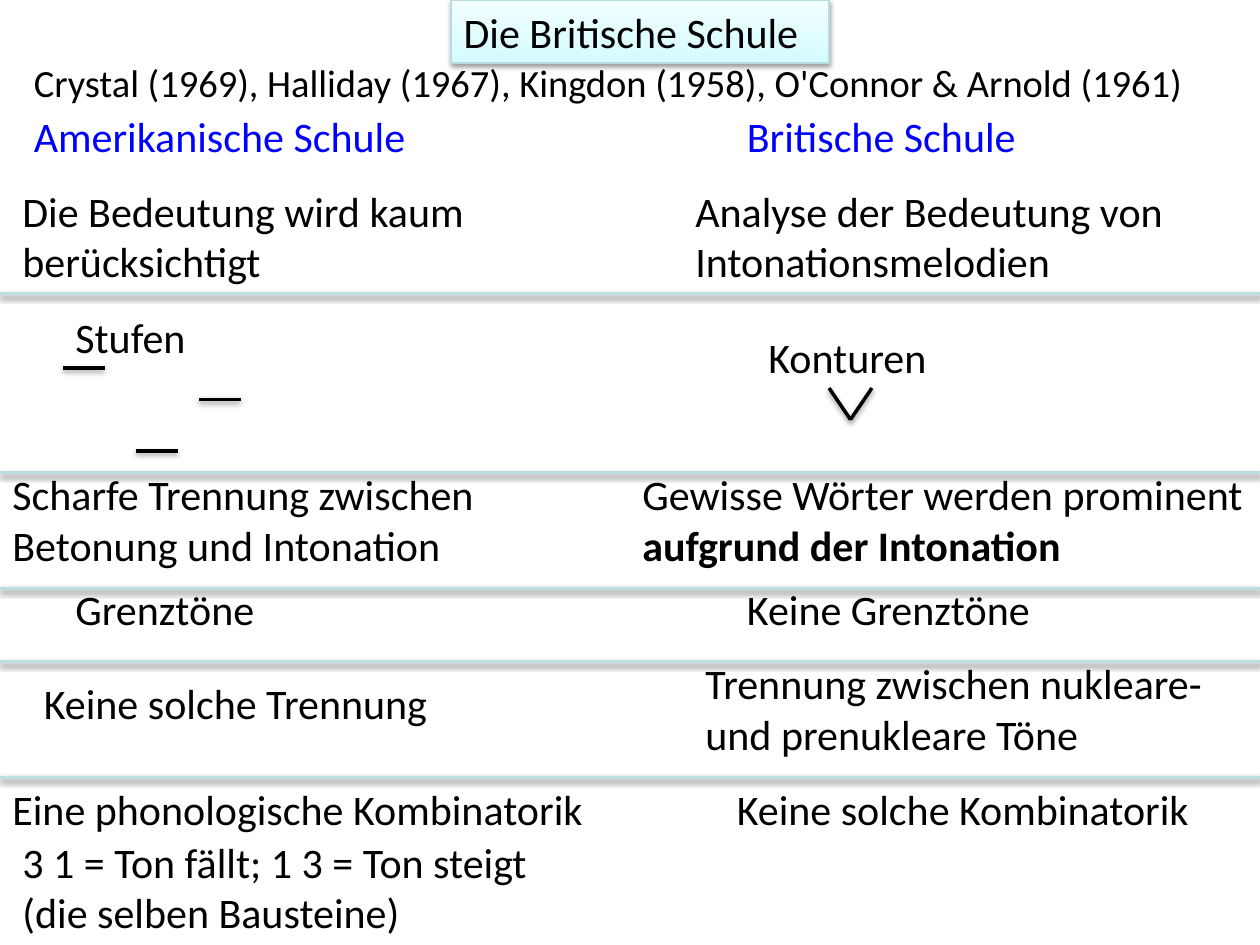
from dataclasses import dataclass

import pptx
import pptx.dml.color
import pptx.enum.shapes
import pptx.enum.text
import pptx.oxml
import pptx.oxml.ns
import pptx.util
from pptx.util import Inches

COLORS = {
    "text": "000000",
    "heading": "0000FF",
    "divider": "BBE0E3",
    "mark": "000000",
    "title_border": "B6DCDF",
}
TITLE_GRADIENT = [(0, "D3FBFF"), (35, "DFFCFF"), (100, "F2FEFF")]
FONT = "Calibri"
A_NS = pptx.oxml.ns.nsdecls("a")


@dataclass
class Entry:
    text: str
    left: float
    top: float
    width: float
    height: float = 0.5
    color: str = "text"
    size: float = 24
    bold_ending: str = ""


@dataclass
class Stroke:
    x1: float
    y1: float
    x2: float
    y2: float
    color: str = "mark"


ENTRIES = [
    # Sources and column headings
    Entry("Crystal (1969), Halliday (1967), Kingdon (1958), O'Connor & Arnold (1961)",
          0.17, 0.42, 9.58, 0.47, size=22),
    Entry("Amerikanische Schule", 0.17, 0.83, 3.75, color="heading"),
    Entry("Britische Schule", 5.83, 0.83, 3.83, color="heading"),
    # Meaning
    Entry("Die Bedeutung wird kaum berücksichtigt", 0.08, 1.42, 4, 0.91),
    Entry("Analyse der Bedeutung von Intonationsmelodien", 5.42, 1.42, 4.17, 0.91),
    # Levels and contours
    Entry("Stufen", 0.5, 2.42, 1.58),
    Entry("Konturen", 6, 2.58, 1.67),
    # Stress and intonation
    Entry("Scharfe Trennung zwischen Betonung und Intonation", 0, 3.67, 4.08, 0.91),
    Entry("Gewisse Wörter werden prominent ", 5, 3.67, 5, 0.91,
          bold_ending="aufgrund der Intonation"),
    # Boundary tones
    Entry("Grenztöne", 0.5, 4.58, 1.75),
    Entry("Keine Grenztöne", 5.83, 4.58, 2.58),
    # Nuclear and prenuclear tones
    Entry("Keine solche Trennung", 0.25, 5.33, 4.08),
    Entry("Trennung zwischen nukleare- und prenukleare Töne", 5.5, 5.17, 4.25, 0.91),
    # Combinations
    Entry("Eine phonologische Kombinatorik", 0, 6.17, 4.83),
    Entry("3 1 = Ton fällt; 1 3 = Ton steigt (die selben Bausteine)",
          0.08, 6.59, 4.5, 0.91),
    Entry("Keine solche Kombinatorik", 5.75, 6.17, 4),
]

DIVIDER_TOPS = [2.33, 3.75, 4.67, 5.25, 6.17]
LEVEL_MARKS = [(0.5, 2.92), (1.08, 3.58), (1.58, 3.17)]
STROKES = [
    *(Stroke(0, y, 10, y, "divider") for y in DIVIDER_TOPS),
    *(Stroke(x, y, x + 0.33, y) for x, y in LEVEL_MARKS),
    *(Stroke(x, 3.08, 6.75, 3.33) for x in (6.58, 6.92)),
]


def rgb(hex_color: str) -> pptx.dml.color.RGBColor:
    return pptx.dml.color.RGBColor.from_string(hex_color)


def add_shadow(shape) -> None:
    shape._element.spPr.append(pptx.oxml.parse_xml(
        f'<a:effectLst {A_NS}><a:outerShdw blurRad="{pptx.util.Pt(3.1)}" '
        f'dist="{pptx.util.Pt(1.6)}" dir="5400000" rotWithShape="0">'
        '<a:srgbClr val="000000"><a:alpha val="38000"/></a:srgbClr>'
        '</a:outerShdw></a:effectLst>'))


def format_text(frame, color: str, size: float) -> None:
    frame.word_wrap = True
    frame.vertical_anchor = pptx.enum.text.MSO_ANCHOR.TOP
    for paragraph in frame.paragraphs:
        paragraph.alignment = pptx.enum.text.PP_ALIGN.LEFT
        for run in paragraph.runs:
            run.font.name = FONT
            run.font.size = pptx.util.Pt(size)
            run.font.color.rgb = rgb(COLORS[color])


def fill_title(title) -> None:
    title.left, title.top = Inches(3.58), Inches(0)
    title.width, title.height = Inches(3), Inches(0.5)
    title.text_frame.text = "Die Britische Schule"
    format_text(title.text_frame, "text", 24)
    # A fixed size keeps the box from growing to the layout's title height
    title.text_frame.auto_size = pptx.enum.text.MSO_AUTO_SIZE.NONE

    title.fill.gradient()
    title.fill.gradient_angle = 90
    stops = title._element.spPr.find(".//" + pptx.oxml.ns.qn("a:gsLst"))
    for stop in list(stops):
        stops.remove(stop)
    for position, color in TITLE_GRADIENT:
        stops.append(pptx.oxml.parse_xml(
            f'<a:gs {A_NS} pos="{position * 1000}"><a:srgbClr val="{color}"/></a:gs>'))
    title.line.color.rgb = rgb(COLORS["title_border"])
    title.line.width = pptx.util.Pt(0.75)
    add_shadow(title)


def add_entry(slide, entry: Entry) -> None:
    box = slide.shapes.add_textbox(Inches(entry.left), Inches(entry.top),
                                   Inches(entry.width), Inches(entry.height))
    paragraph = box.text_frame.paragraphs[0]
    paragraph.text = entry.text
    if entry.bold_ending:
        ending = paragraph.add_run()
        ending.text = entry.bold_ending
        ending.font.bold = True
    format_text(box.text_frame, entry.color, entry.size)
    box.text_frame.auto_size = pptx.enum.text.MSO_AUTO_SIZE.SHAPE_TO_FIT_TEXT


def add_stroke(slide, stroke: Stroke) -> None:
    line = slide.shapes.add_connector(
        pptx.enum.shapes.MSO_CONNECTOR.STRAIGHT,
        Inches(stroke.x1), Inches(stroke.y1), Inches(stroke.x2), Inches(stroke.y2))
    line.line.color.rgb = rgb(COLORS[stroke.color])
    line.line.width = pptx.util.Pt(2)
    add_shadow(line)


def main() -> None:
    presentation = pptx.Presentation()
    presentation.slide_width, presentation.slide_height = Inches(10), Inches(7.5)
    slide = presentation.slides.add_slide(presentation.slide_layouts[5])
    fill_title(slide.shapes.title)
    for entry in ENTRIES:
        add_entry(slide, entry)
    for stroke in STROKES:
        add_stroke(slide, stroke)
    presentation.save("out.pptx")


if __name__ == "__main__":
    main()
